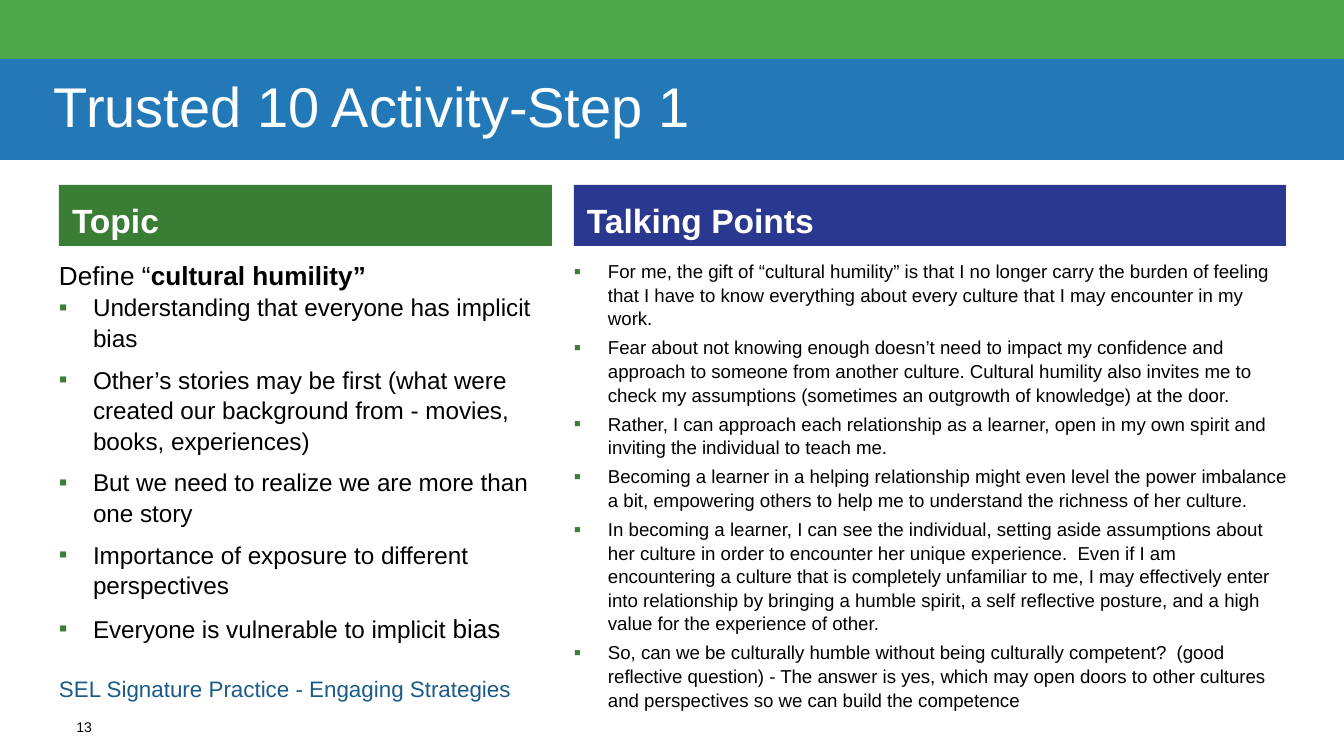
from typing import NamedTuple

from lxml import etree
from pptx import Presentation
from pptx import util as u
from pptx.dml.color import RGBColor
from pptx.enum import shapes, text
from pptx.oxml.ns import qn

PX = 914400 / 134.4
FONT = "Arial"
COLORS = {
    "white": "FFFFFF",
    "black": "000000",
    "band": "4EA848",
    "title": "2379B8",
    "topic": "3A7E36",
    "talking": "2B3890",
    "practice": "1A5B8A",
}


class Box(NamedTuple):
    x: int
    y: int
    w: int
    h: int


class Run(NamedTuple):
    text: str
    size: float
    color: str = "black"
    bold: bool = False


class Para(NamedTuple):
    runs: list[Run]
    spacing: float = 1.05
    after: float = 0
    bullet: int = 0
    align: text.PP_ALIGN = text.PP_ALIGN.LEFT


class Panel(NamedTuple):
    box: Box
    paras: list[Para]
    fill: str = ""
    insets: tuple[int, int, int, int] = (0, 0, 0, 0)
    anchor: text.MSO_ANCHOR = text.MSO_ANCHOR.TOP


def px(n: int) -> u.Emu:
    return u.Emu(round(n * PX))


def rgb(name: str) -> RGBColor:
    return RGBColor.from_string(COLORS[name])


def add_bullet(p, size: int) -> None:
    pPr = p._p.get_or_add_pPr()
    pPr.set("marL", str(px(34)))
    pPr.set("indent", str(-px(34)))
    clr = etree.SubElement(pPr, qn("a:buClr"))
    etree.SubElement(clr, qn("a:srgbClr"), val=COLORS["topic"])
    etree.SubElement(pPr, qn("a:buSzPct"), val=str(size * 1000))
    etree.SubElement(pPr, qn("a:buFont"), typeface=FONT)
    etree.SubElement(pPr, qn("a:buChar"), char="▪")


def add_para(p, para: Para) -> None:
    if para.bullet:
        add_bullet(p, para.bullet)
    p.alignment = para.align
    p.line_spacing = para.spacing
    p.space_before = u.Pt(0)
    p.space_after = u.Pt(para.after)
    for run in para.runs:
        r = p.add_run()
        r.text = run.text
        r.font.name = FONT
        r.font.size = u.Pt(run.size)
        r.font.bold = run.bold
        r.font.color.rgb = rgb(run.color)


def add_panel(s, panel: Panel) -> None:
    place = [px(n) for n in panel.box]
    if panel.fill:
        sp = s.shapes.add_shape(shapes.MSO_SHAPE.RECTANGLE, *place)
        sp.shadow.inherit = False
        sp.fill.solid()
        sp.fill.fore_color.rgb = rgb(panel.fill)
        sp.line.fill.background()
    else:
        sp = s.shapes.add_textbox(*place)
    tf = sp.text_frame
    tf.word_wrap = True
    tf.vertical_anchor = panel.anchor
    tf.margin_left, tf.margin_top, tf.margin_right, tf.margin_bottom = (
        px(n) for n in panel.insets
    )
    for i, para in enumerate(panel.paras):
        add_para(tf.add_paragraph() if i else tf.paragraphs[0], para)


def heading(box: Box, label: str, fill: str) -> Panel:
    return Panel(box, [Para([Run(label, 18, "white", True)])], fill, (13, 13, 13, 13))


LEFT, LEFT_W = 59, 493
RIGHT, RIGHT_W = 574, 712

TOPICS = [
    "Understanding that everyone has implicit bias",
    "Other’s stories may be first (what were created our background from - movies, "
    "books, experiences)",
    "But we need to realize we are more than one story",
    "Importance of exposure to different perspectives",
]
POINTS = [
    "For me, the gift of “cultural humility” is that I no longer carry the burden of "
    "feeling that I have to know everything about every culture that I may encounter "
    "in my work.",
    "Fear about not knowing enough doesn’t need to impact my confidence and approach "
    "to someone from another culture. Cultural humility also invites me to check my "
    "assumptions (sometimes an outgrowth of knowledge) at the door.",
    "Rather, I can approach each relationship as a learner, open in my own spirit and "
    "inviting the individual to teach me.",
    "Becoming a learner in a helping relationship might even level the power imbalance "
    "a bit, empowering others to help me to understand the richness of her culture.",
    "In becoming a learner, I can see the individual, setting aside assumptions about "
    "her culture in order to encounter her unique experience.  Even if I am "
    "encountering a culture that is completely unfamiliar to me, I may effectively "
    "enter into relationship by bringing a humble spirit, a self reflective posture, "
    "and a high value for the experience of other.",
    "So, can we be culturally humble without being culturally competent?  (good "
    "reflective question) - The answer is yes, which may open doors to other cultures "
    "and perspectives so we can build the competence",
]

topic_paras = [
    Para([Run("Define “", 14), Run("cultural humility”", 14, bold=True)]),
    *(Para([Run(t, 13)], after=6, bullet=100) for t in TOPICS),
    Para(
        [Run("Everyone is vulnerable to implicit", 13), Run(" bias", 14)],
        after=6,
        bullet=100,
    ),
]
point_paras = [Para([Run(t, 10)], after=3, bullet=110) for t in POINTS]

PANELS = [
    Panel(Box(0, 0, 1344, 59), [], "band"),
    Panel(
        Box(0, 59, 1344, 101),
        [Para([Run("Trusted 10 Activity-Step 1", 30, "white")], spacing=0.9)],
        "title",
        (54, 5, 9, 5),
        text.MSO_ANCHOR.MIDDLE,
    ),
    heading(Box(LEFT, 185, LEFT_W, 61), "Topic", "topic"),
    Panel(Box(LEFT, 258, LEFT_W, 391), topic_paras),
    Panel(
        Box(LEFT, 674, LEFT_W, 40),
        [Para([Run("SEL Signature Practice - Engaging Strategies", 12, "practice")])],
    ),
    heading(Box(RIGHT, 185, RIGHT_W, 61), "Talking Points", "talking"),
    Panel(Box(RIGHT, 259, RIGHT_W, 454), point_paras),
    Panel(
        Box(LEFT, 714, 42, 26),
        [Para([Run("13", 7.5)], spacing=1.0, align=text.PP_ALIGN.RIGHT)],
        insets=(9, 5, 9, 5),
        anchor=text.MSO_ANCHOR.MIDDLE,
    ),
]


def main() -> None:
    prs = Presentation()
    prs.slide_width, prs.slide_height = px(1344), px(756)
    s = prs.slides.add_slide(prs.slide_layouts[6])
    for panel in PANELS:
        add_panel(s, panel)
    prs.save("out.pptx")


if __name__ == "__main__":
    main()
